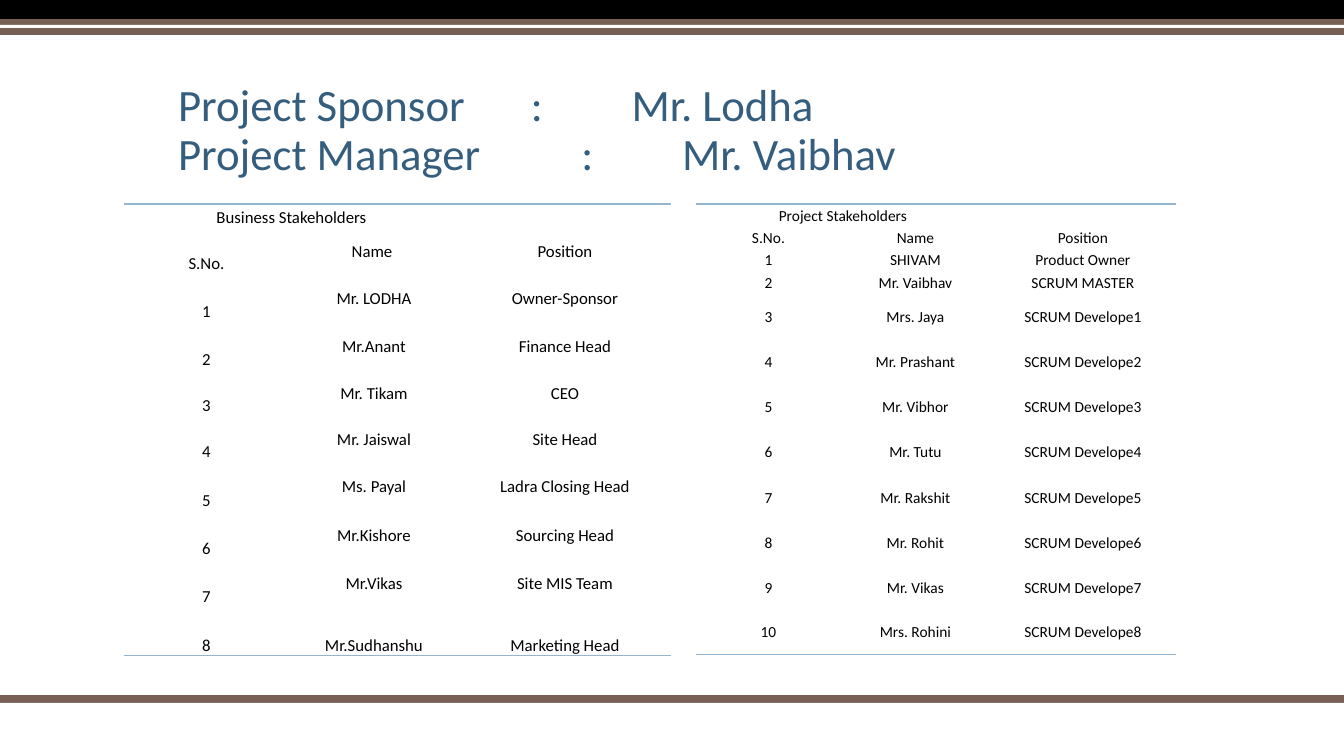
"""Build the slide of sponsor, manager and stakeholder tables."""
from lxml.etree import SubElement
from pptx import Presentation
from pptx.dml.color import RGBColor
from pptx.enum.shapes import MSO_SHAPE
from pptx.enum.text import MSO_ANCHOR, MSO_AUTO_SIZE, PP_ALIGN
from pptx.oxml import parse_xml
from pptx.oxml.ns import nsdecls, qn
from pptx.util import Pt

HUES = {"brown": "775F55", "white": "FFFFFF", "black": "000000",
        "title": "355D7E", "rule": "94B6D2"}
FACE = "Calibri"
WIDE, HIGH = 1344, 756
SCALE = 12192000 / WIDE
PLAIN = "{2D5ABB26-0587-4C30-8999-92F81FD0307C}"

TITLE = ("Project Sponsor\t\t:\t\tMr. Lodha\v"
         "Project Manager\t\t:\t\tMr. Vaibhav")
BANDS = [(695, 11, "brown"), (703, 3, "white"), (0, 19, "black"),
         (19, 16, "brown"), (25, 3, "white")]
TABLES = [
    {"head": "Business Stakeholders", "left": 124, "size": 12,
     "cols": [165, 170, 212],
     "rows": [24, 46, 48, 48, 46, 46, 49, 48, 48, 49],
     "low": {(r, 0) for r in range(1, 10)} | {(9, 1), (9, 2)},
     "names": ("S.No.", "Name ", "Position"),
     "staff": [("Mr. LODHA", "Owner-Sponsor"), ("Mr.Anant", "Finance Head"),
               ("Mr. Tikam", "CEO"), ("Mr. Jaiswal", "Site Head"),
               ("Ms. Payal", "Ladra Closing Head"),
               ("Mr.Kishore", "Sourcing Head"), ("Mr.Vikas", "Site MIS Team"),
               ("Mr.Sudhanshu", "Marketing Head")]},
    {"head": "Project Stakeholders", "left": 696, "size": 11,
     "cols": [145, 149, 186],
     "rows": [22, 23, 22, 23] + [45] * 3 + [46] + [45] * 4,
     "low": set(),
     "names": ("S.No.", "Name", "Position"),
     "staff": [("SHIVAM", "Product Owner"), ("Mr. Vaibhav", "SCRUM MASTER")]
     + [(name, f"SCRUM Develope{n}") for n, name in enumerate(
         ["Mrs. Jaya", "Mr. Prashant", "Mr. Vibhor", "Mr. Tutu",
          "Mr. Rakshit", "Mr. Rohit", "Mr. Vikas", "Mrs. Rohini"], 1)]},
]


def px(num):
    return round(num * SCALE)


def put(item, **vals):
    for key, val in vals.items():
        setattr(item, key, val)


def ink(font, size, hue):
    put(font, name=FACE, size=Pt(size))
    font.color.rgb = RGBColor.from_string(HUES[hue])


def edge(cell, side):
    cell._tc.get_or_add_tcPr().append(parse_xml(
        f'<a:{side} {nsdecls("a")} w="12700"><a:solidFill>'
        f'<a:srgbClr val="{HUES["rule"]}"/></a:solidFill></a:{side}>'))


def add_band(slide, top, high, hue):
    band = slide.shapes.add_shape(
        MSO_SHAPE.RECTANGLE, 0, px(top), px(WIDE), px(high))
    band.shadow.inherit = False
    band.fill.solid()
    band.fill.fore_color.rgb = RGBColor.from_string(HUES[hue])
    band.line.fill.background()


def fill_cell(cell, text, size, low):
    put(cell, margin_left=px(1), margin_right=px(1), margin_top=px(1),
        margin_bottom=0,
        vertical_anchor=MSO_ANCHOR.BOTTOM if low else MSO_ANCHOR.MIDDLE)
    cell.fill.background()
    para = cell.text_frame.paragraphs[0]
    para.alignment = PP_ALIGN.CENTER
    if text:
        run = para.add_run()
        run.text = text
        ink(run.font, size, "black")
    else:
        SubElement(para._p, qn("a:endParaRPr"), sz=str(size * 100))


def add_grid(slide, data):
    rows, cols = data["rows"], data["cols"]
    grid = slide.shapes.add_table(
        len(rows), len(cols), px(data["left"]), px(204),
        px(sum(cols)), px(sum(rows))).table
    put(grid, first_row=False, horz_banding=False)
    grid._tbl.tblPr.find(qn("a:tableStyleId")).text = PLAIN
    for col, wide in zip(grid.columns, cols):
        col.width = px(wide)
    for row, high in zip(grid.rows, rows):
        row.height = px(high)
    texts = [(data["head"], "", ""), data["names"]]
    texts += [(str(n), *who) for n, who in enumerate(data["staff"], 1)]
    for r, line in enumerate(texts):
        for c, text in enumerate(line):
            cell = grid.cell(r, c)
            if r == 0:
                edge(cell, "lnT")
            if r == len(rows) - 1:
                edge(cell, "lnB")
            fill_cell(cell, text, data["size"], r == 0 or (r, c) in data["low"])
    grid.cell(0, 0).merge(grid.cell(0, 1))


def main():
    deck = Presentation()
    put(deck, slide_width=px(WIDE), slide_height=px(HIGH))
    slide = deck.slides.add_slide(deck.slide_layouts[5])
    for band in BANDS:
        add_band(slide, *band)
    title = slide.shapes.title
    put(title, left=px(168), top=px(67), width=px(1008), height=px(118))
    frame = title.text_frame
    put(frame, text=TITLE, word_wrap=True, auto_size=MSO_AUTO_SIZE.NONE,
        vertical_anchor=MSO_ANCHOR.BOTTOM)
    para = frame.paragraphs[0]
    put(para, alignment=PP_ALIGN.LEFT, line_spacing=0.9)
    for run in para.runs:
        ink(run.font, 32, "title")
    for data in TABLES:
        add_grid(slide, data)
    deck.save("out.pptx")


if __name__ == "__main__":
    main()
